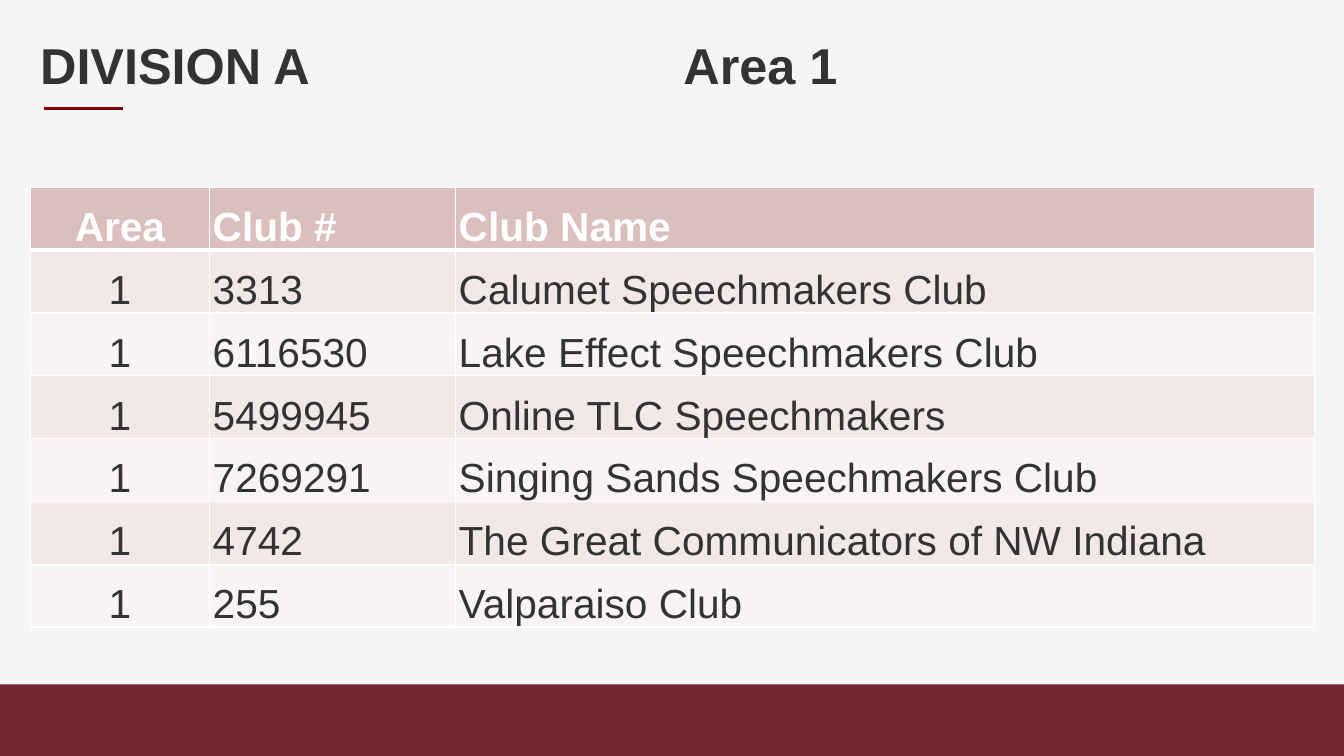
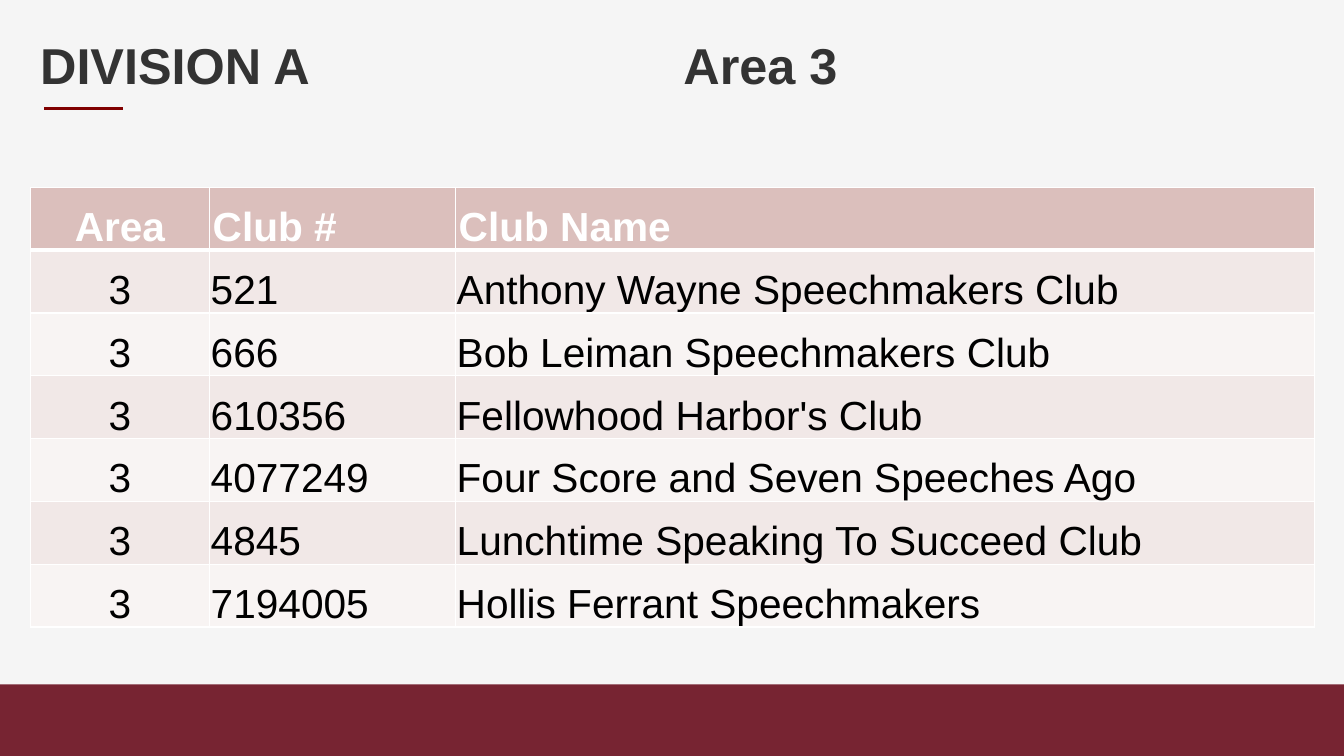
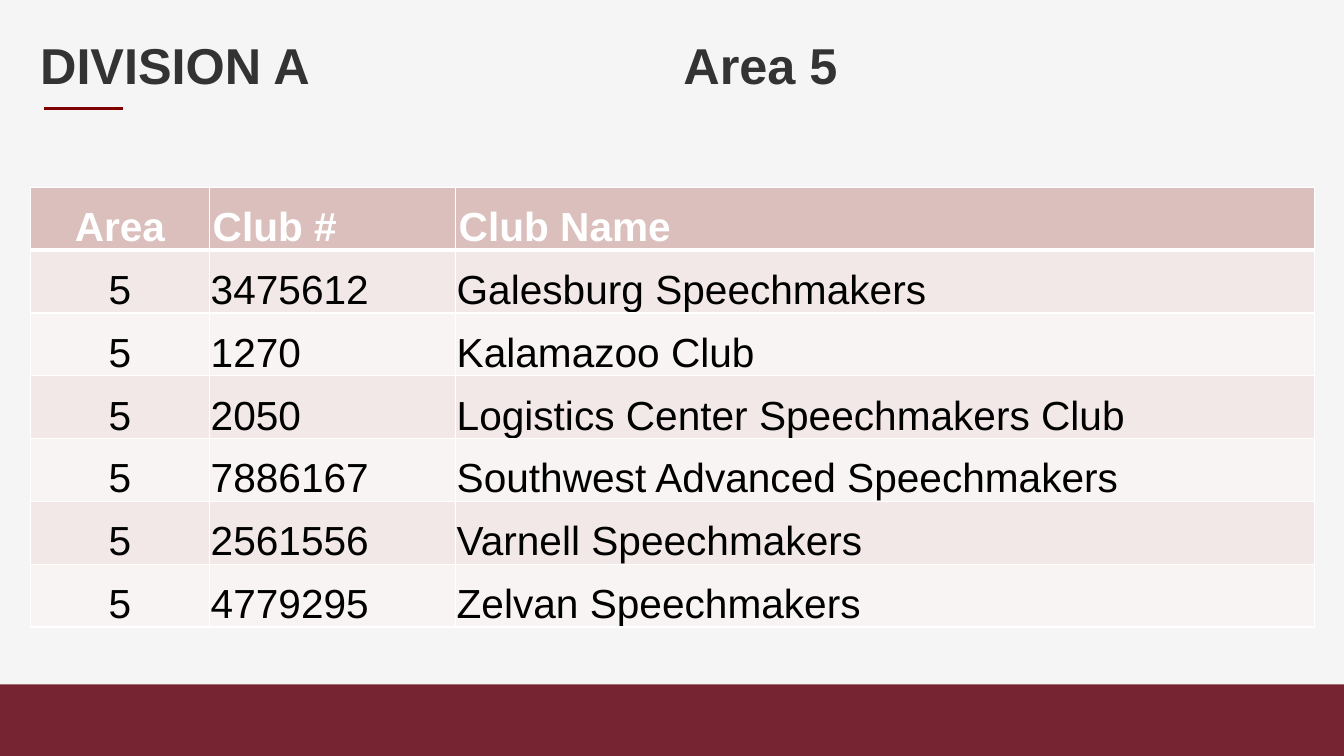
import dataclasses

import lxml.etree
import pptx
import pptx.dml.color
import pptx.enum.shapes
import pptx.enum.text
import pptx.oxml.ns
import pptx.util

Inches = pptx.util.Inches
Pt = pptx.util.Pt
ALIGN = pptx.enum.text.PP_ALIGN
ANCHOR = pptx.enum.text.MSO_ANCHOR


@dataclasses.dataclass(frozen=True)
class Theme:
    font: str = "Arial"
    title_size: float = 36
    table_size: float = 29
    background: str = "F5F5F5"
    band: str = "772432"
    accent: str = "800000"
    ink: str = "333333"
    black: str = "000000"
    white: str = "FFFFFF"
    header_fill: str = "DBBFBC"
    row_fills: tuple = ("F1E8E7", "F8F4F3")
    rule: float = 2.25
    grid: float = 1
    header_rule: float = 3


def rgb(value):
    return pptx.dml.color.RGBColor.from_string(value)


def apply(target, **values):
    for attribute, value in values.items():
        setattr(target, attribute, value)


def add_xml(parent, tag, **attributes):
    return lxml.etree.SubElement(parent, pptx.oxml.ns.qn(tag), attributes)


class Deck:
    WIDTH, HEIGHT = 13.33, 7.5
    LEFT, CONTENT_WIDTH = 0.3, 12.74
    BAND_TOP = 6.79
    TABLE_TOP, ROW_HEIGHT = 1.86, 4.36 / 7
    COLUMNS = (1.78, 2.44, 8.52)
    AREA_TAB = 6.38
    HEADER = ("Area", "Club #", "Club Name")

    def __init__(self, theme):
        self.theme = theme
        self.presentation = pptx.Presentation()
        apply(self.presentation, slide_width=Inches(self.WIDTH), slide_height=Inches(self.HEIGHT))
        self.slide = None

    def new_slide(self):
        self.slide = self.presentation.slides.add_slide(self.presentation.slide_layouts[6])
        backdrop = self.slide.background.fill
        backdrop.solid()
        backdrop.fore_color.rgb = rgb(self.theme.background)
        self.band()
        self.accent_rule()

    def band(self):
        band = self.slide.shapes.add_shape(
            pptx.enum.shapes.MSO_SHAPE.RECTANGLE,
            0, Inches(self.BAND_TOP), Inches(self.WIDTH), Inches(self.HEIGHT - self.BAND_TOP))
        band.shadow.inherit = False
        band.fill.solid()
        band.fill.fore_color.rgb = rgb(self.theme.band)
        band.line.fill.background()

    def accent_rule(self):
        rule = self.slide.shapes.add_connector(
            pptx.enum.shapes.MSO_CONNECTOR.STRAIGHT,
            Inches(0.44), Inches(1.08), Inches(1.22), Inches(1.08))
        rule.line.color.rgb = rgb(self.theme.accent)
        rule.line.width = Pt(self.theme.rule)
        add_xml(rule._element.spPr, "a:effectLst")

    def styled_run(self, paragraph, text, size, color, bold):
        run = paragraph.add_run()
        run.text = text
        apply(run.font, name=self.theme.font, size=Pt(size), bold=bold)
        run.font.color.rgb = rgb(color)

    def title(self, division, area):
        heading = self.slide.shapes.add_textbox(
            Inches(self.LEFT), Inches(0.32), Inches(self.CONTENT_WIDTH), Inches(0.71)).text_frame
        apply(heading, word_wrap=True, vertical_anchor=ANCHOR.MIDDLE)
        paragraph = heading.paragraphs[0]
        tabs = add_xml(paragraph._p.get_or_add_pPr(), "a:tabLst")
        add_xml(tabs, "a:tab", pos=str(Inches(self.AREA_TAB)), algn="l")
        paragraph.line_spacing = 0.9
        self.styled_run(paragraph, f"{division}\t{area}", self.theme.title_size, self.theme.ink, True)

    def borders(self, cell, top, bottom):
        sides = {"L": self.theme.grid, "R": self.theme.grid, "T": top, "B": bottom}
        for side, width in sides.items():
            border = add_xml(cell._tc.get_or_add_tcPr(), f"a:ln{side}", w=str(Pt(width)))
            add_xml(add_xml(border, "a:solidFill"), "a:srgbClr", val=self.theme.white)

    def cell(self, cell, text, fill, color, bold, inset, centred):
        cell.fill.solid()
        cell.fill.fore_color.rgb = rgb(fill)
        side = Inches(inset)
        apply(cell, margin_left=side, margin_top=side, margin_right=side, margin_bottom=0,
              vertical_anchor=ANCHOR.BOTTOM)
        paragraph = cell.text_frame.paragraphs[0]
        paragraph.alignment = ALIGN.CENTER if centred else ALIGN.LEFT
        self.styled_run(paragraph, text, self.theme.table_size, color, bold)

    def club_table(self, area, clubs, ink, inset):
        theme = self.theme
        rows = [self.HEADER] + [(area, number, name) for number, name in clubs]
        table = self.slide.shapes.add_table(
            len(rows), len(self.COLUMNS), Inches(self.LEFT), Inches(self.TABLE_TOP),
            Inches(self.CONTENT_WIDTH), Inches(self.ROW_HEIGHT * len(rows))).table
        for column, width in zip(table.columns, self.COLUMNS):
            column.width = Inches(width)
        for r, values in enumerate(rows):
            table.rows[r].height = Inches(self.ROW_HEIGHT)
            if r == 0:
                style = dict(fill=theme.header_fill, color=theme.white, bold=True, inset=0.03)
            else:
                style = dict(fill=theme.row_fills[(r - 1) % 2], color=ink, bold=False, inset=inset)
            top = theme.header_rule if r == 1 else theme.grid
            bottom = theme.header_rule if r == 0 else theme.grid
            for c, text in enumerate(values):
                cell = table.cell(r, c)
                self.borders(cell, top, bottom)
                self.cell(cell, text, centred=c == 0, **style)


def main():
    theme = Theme()
    deck = Deck(theme)
    areas = [
        ("1", theme.ink, 0.03, [
            ("3313", "Calumet Speechmakers Club"),
            ("6116530", "Lake Effect Speechmakers Club"),
            ("5499945", "Online TLC Speechmakers"),
            ("7269291", "Singing Sands Speechmakers Club"),
            ("4742", "The Great Communicators of NW Indiana"),
            ("255", "Valparaiso Club"),
        ]),
        ("3", theme.black, 0.01, [
            ("521", "Anthony Wayne Speechmakers Club"),
            ("666", "Bob Leiman Speechmakers Club"),
            ("610356", "Fellowhood Harbor's Club"),
            ("4077249", "Four Score and Seven Speeches Ago"),
            ("4845", "Lunchtime Speaking To Succeed Club"),
            ("7194005", "Hollis Ferrant Speechmakers"),
        ]),
        ("5", theme.black, 0.01, [
            ("3475612", "Galesburg Speechmakers"),
            ("1270", "Kalamazoo Club"),
            ("2050", "Logistics Center Speechmakers Club"),
            ("7886167", "Southwest Advanced Speechmakers"),
            ("2561556", "Varnell Speechmakers"),
            ("4779295", "Zelvan Speechmakers"),
        ]),
    ]
    for area, ink, inset, clubs in areas:
        deck.new_slide()
        deck.title("DIVISION A", f"Area {area}")
        deck.club_table(area, clubs, ink, inset)
    deck.presentation.save("out.pptx")


if __name__ == "__main__":
    main()
